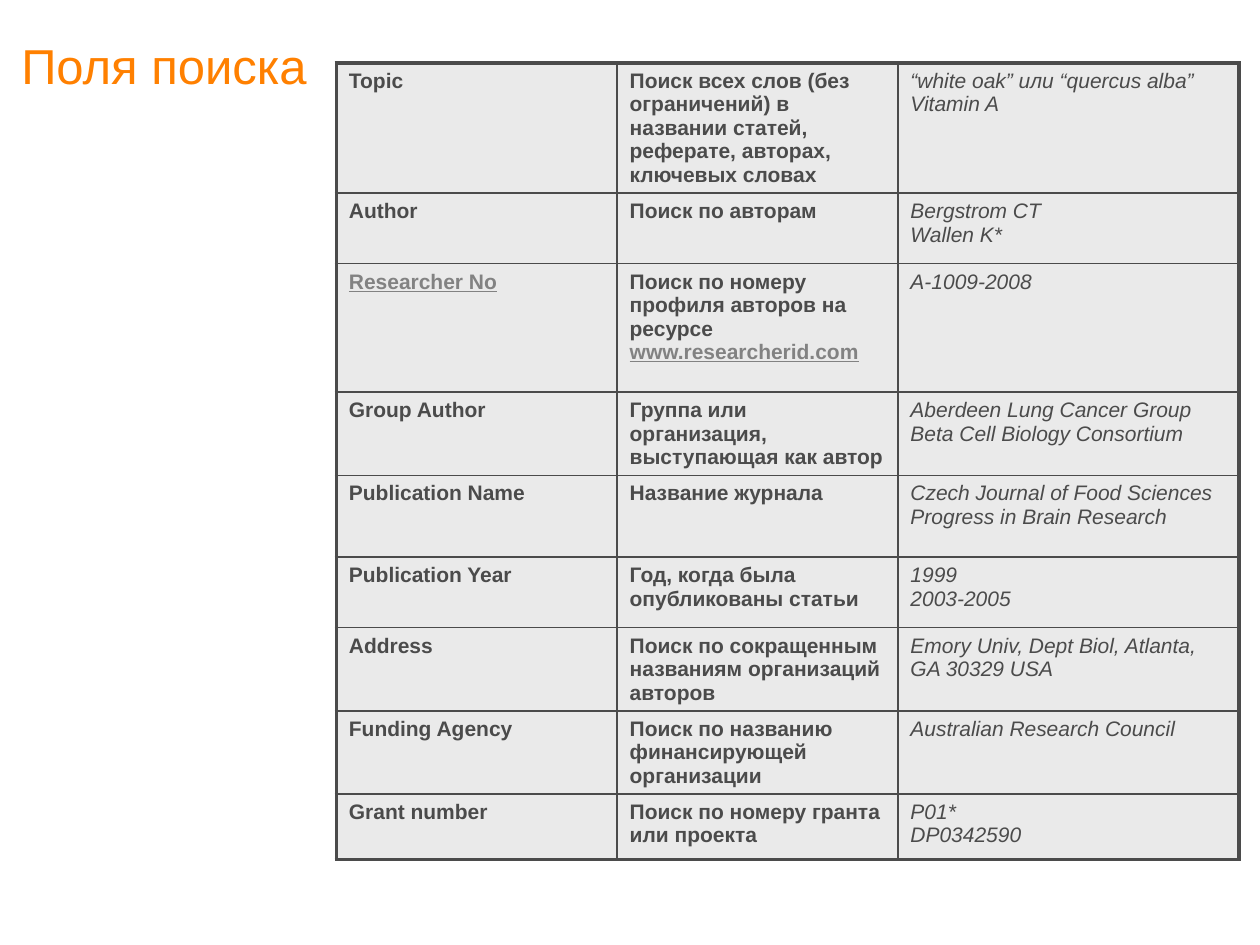
from lxml import etree
from pptx import Presentation
from pptx import util as u
from pptx.dml.color import RGBColor
from pptx.enum import text
from pptx.oxml.ns import qn

DARK, LINK, ORANGE, PALE = "4B4B4B", "828282", "FF8000", "EAEAEA"


def add_text(p, content, size=12, color=DARK, bold=False, italic=False, underline=False):
    r = p.add_run()
    r.text = content
    f = r.font
    f.name, f.size = "Arial", u.Pt(size)
    f.bold, f.italic, f.underline = bold, italic, underline
    f.color.rgb = RGBColor.from_string(color)


def add_border(cell, side, width):
    ln = etree.SubElement(cell._tc.get_or_add_tcPr(), qn("a:ln" + side), w=str(u.Pt(width)))
    fill = etree.SubElement(ln, qn("a:solidFill"))
    etree.SubElement(fill, qn("a:srgbClr"), val=DARK)


prs = Presentation()
prs.slide_width, prs.slide_height = u.Cm(25.4), u.Cm(19.05)
s = prs.slides.add_slide(prs.slide_layouts[5])

# Title
title = s.shapes.title
title.left, title.top = u.Cm(0.43), u.Cm(0.64)
title.width, title.height = u.Cm(22.86), u.Cm(1.27)
tf = title.text_frame
tf.auto_size = text.MSO_AUTO_SIZE.NONE
tf.word_wrap = True
tf.vertical_anchor = text.MSO_ANCHOR.BOTTOM
tf.margin_left = tf.margin_top = tf.margin_right = tf.margin_bottom = 0
p = tf.paragraphs[0]
p.alignment = text.PP_ALIGN.LEFT
p.line_spacing = 0.9
add_text(p, "Поля поиска", size=28, color=ORANGE)

# Search fields: row height, field name, meaning, example lines
SITE = "www.researcherid.com"
FIELD_ID = "Researcher No"
fields = [
    (2.59, "Topic",
     "Поиск всех слов (без ограничений) в названии статей, реферате, авторах, ключевых словах",
     ["“white oak” или “quercus alba”", "Vitamin A"]),
    (1.42, "Author", "Поиск по авторам", ["Bergstrom CT", "Wallen K*"]),
    (2.59, FIELD_ID, "Поиск по номеру профиля авторов на ресурсе " + SITE, ["A-1009-2008"]),
    (1.65, "Group Author", "Группа или организация, выступающая как автор",
     ["Aberdeen Lung Cancer Group", "Beta Cell Biology Consortium"]),
    (1.65, "Publication Name", "Название журнала",
     ["Czech Journal of Food Sciences", "Progress in Brain Research"]),
    (1.42, "Publication Year", "Год, когда была опубликованы статьи", ["1999", "2003-2005"]),
    (1.22, "Address", "Поиск по сокращенным названиям организаций авторов",
     ["Emory Univ, Dept Biol, Atlanta, GA 30329 USA"]),
    (1.22, "Funding Agency", "Поиск по названию финансирующей организации",
     ["Australian Research Council"]),
    (1.32, "Grant number", "Поиск по номеру гранта или проекта", ["P01*", "DP0342590"]),
]
widths = [5.66, 5.66, 6.88]

# Table
table = s.shapes.add_table(len(fields), len(widths), u.Cm(6.78), u.Cm(1.27),
                           u.Cm(sum(widths)), u.Cm(sum(f[0] for f in fields))).table
table.first_row = table.horz_banding = False
for col, width in zip(table.columns, widths):
    col.width = u.Cm(width)

last_row, last_col = len(fields) - 1, len(widths) - 1
for i, (height, name, meaning, examples) in enumerate(fields):
    table.rows[i].height = u.Cm(height)

    # Heavy outer frame, thin inner lines
    for j in range(len(widths)):
        cell = table.cell(i, j)
        outer = {"L": j == 0, "R": j == last_col, "T": i == 0, "B": i == last_row}
        for side, is_outer in outer.items():
            add_border(cell, side, 2.25 if is_outer else 1)
        cell.fill.solid()
        cell.fill.fore_color.rgb = RGBColor.from_string(PALE)

    # Field name and meaning in bold, links grey and underlined
    is_link = name == FIELD_ID
    add_text(table.cell(i, 0).text_frame.paragraphs[0], name, bold=True,
             color=LINK if is_link else DARK, underline=is_link)
    p = table.cell(i, 1).text_frame.paragraphs[0]
    add_text(p, meaning.removesuffix(SITE), bold=True)
    if meaning.endswith(SITE):
        add_text(p, SITE, bold=True, color=LINK, underline=True)

    # Examples in italics, one paragraph each
    tf = table.cell(i, 2).text_frame
    for k, example in enumerate(examples):
        p = tf.add_paragraph() if k else tf.paragraphs[0]
        add_text(p, example, italic=True)

prs.save("out.pptx")
